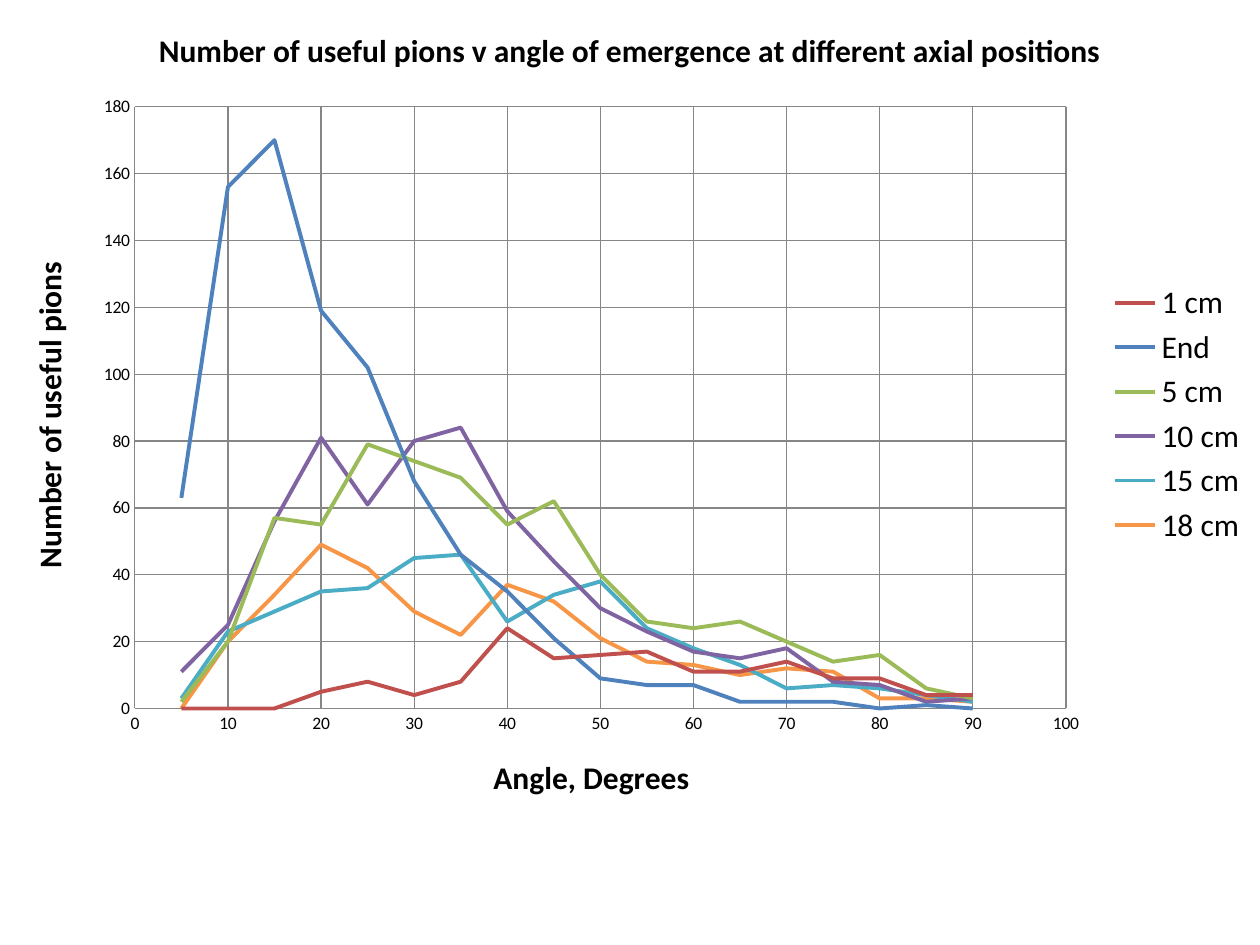
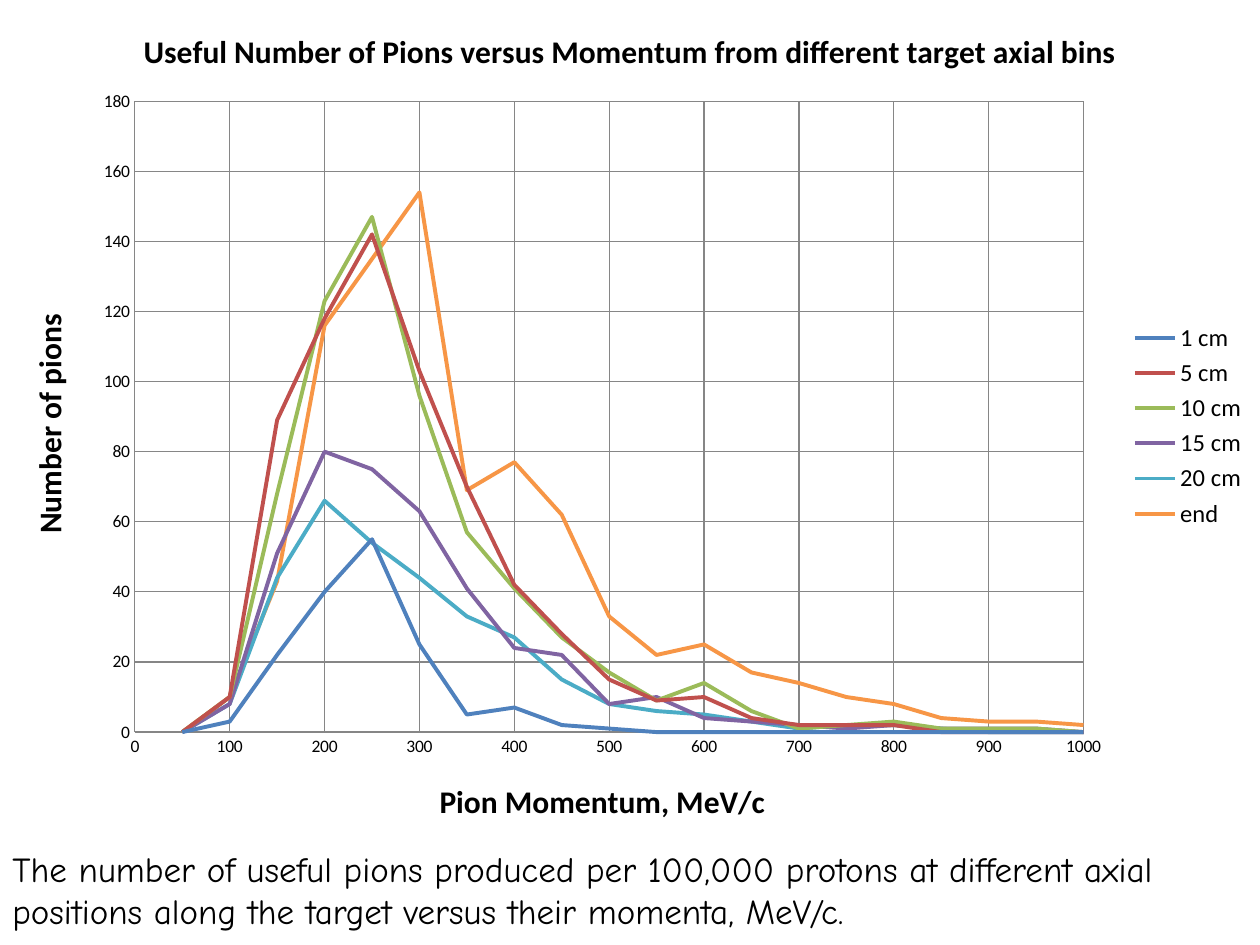
"""Two slides of smooth scatter charts on pion yield by angle and by momentum."""
from lxml.etree import SubElement
from pptx import Presentation
from pptx.chart.data import XyChartData
from pptx.dml.color import RGBColor
from pptx.enum.chart import XL_CHART_TYPE as ChartType, XL_LEGEND_POSITION as LegendPos, XL_TICK_MARK as Tick
from pptx.enum.text import MSO_AUTO_SIZE as AutoSize
from pptx.oxml.ns import qn
from pptx.util import Inches, Pt

WIDTH, HEIGHT = Inches(10), Inches(7.5)
COLORS = {"text": "000000", "grid": "868686", "blue": "4F81BD", "red": "C0504D",
          "green": "9BBB59", "purple": "8064A2", "teal": "4BACC6", "orange": "F79646"}
CHART_FONT, NOTE_FONT = "Calibri", "Comic Neue"
TITLE_SIZE, TICK_SIZE = 18, 10

ANGLES = range(5, 91, 5)
ANGLE_SERIES = [
    ("1 cm", "red", [0, 0, 0, 5, 8, 4, 8, 24, 15, 16, 17, 11, 11, 14, 9, 9, 4, 4]),
    ("End", "blue", [63, 156, 170, 119, 102, 68, 46, 35, 21, 9, 7, 7, 2, 2, 2, 0, 1, 0]),
    ("5 cm", "green", [2, 20, 57, 55, 79, 74, 69, 55, 62, 40, 26, 24, 26, 20, 14, 16, 6, 3]),
    ("10 cm", "purple", [11, 25, 56, 81, 61, 80, 84, 59, 44, 30, 23, 17, 15, 18, 8, 7, 2, 3]),
    ("15 cm", "teal", [3, 23, 29, 35, 36, 45, 46, 26, 34, 38, 24, 18, 13, 6, 7, 6, 4, 2]),
    ("18 cm", "orange", [0, 20, 34, 49, 42, 29, 22, 37, 32, 21, 14, 13, 10, 12, 11, 3, 3, 2]),
]

MOMENTA = range(50, 1001, 50)
MOMENTUM_SERIES = [
    ("1 cm", "blue", [0, 3, 22, 40, 55, 25, 5, 7, 2, 1, 0, 0, 0, 0, 0, 0, 0, 0, 0, 0]),
    ("5 cm", "red", [0, 10, 89, 118, 142, 103, 70, 42, 28, 15, 9, 10, 4, 2, 2, 2, 0, 0, 0, 0]),
    ("10 cm", "green", [0, 10, 68, 123, 147, 96, 57, 41, 27, 17, 9, 14, 6, 1, 2, 3, 1, 1, 1, 0]),
    ("15 cm", "purple", [0, 8, 51, 80, 75, 63, 41, 24, 22, 8, 10, 4, 3, 2, 1, 2, 1, 1, 1, 0]),
    ("20 cm", "teal", [0, 8, 44, 66, 54, 44, 33, 27, 15, 8, 6, 5, 3, 1, 2, 2, 1, 0, 0, 0]),
    ("end", "orange", [0, 10, 43, 116, 135, 154, 69, 77, 62, 33, 22, 25, 17, 14, 10, 8, 4, 3, 3, 2]),
]


def rgb(name):
    """Return a palette colour."""
    return RGBColor.from_string(COLORS[name])


def style_font(font, size, face=CHART_FONT, bold=False):
    """Set the face, size, weight and text colour of a font."""
    font.name, font.size, font.bold = face, Pt(size), bold
    font.color.rgb = rgb("text")


def style_line(line, color, width):
    """Set the colour and width of a line."""
    line.color.rgb, line.width = rgb(color), Pt(width)


def set_title(tf, text):
    """Write a bold chart or axis title."""
    tf.text = text
    style_font(tf.paragraphs[0].runs[0].font, TITLE_SIZE, bold=True)


def style_axis(axis, title, top, step):
    """Give an axis its title, range, grid and lines."""
    set_title(axis.axis_title.text_frame, title)
    axis.minimum_scale, axis.maximum_scale, axis.major_unit = 0, top, step
    axis.major_tick_mark = axis.minor_tick_mark = Tick.NONE
    axis.has_major_gridlines = True
    style_line(axis.major_gridlines.format.line, "grid", 0.75)
    style_line(axis.format.line, "grid", 0.75)
    style_font(axis.tick_labels.font, TICK_SIZE)


def place_plot(chart, box):
    """Fix the inner plot area as shares of the chart."""
    area = chart.element.find(".//" + qn("c:plotArea"))
    for old in area.findall(qn("c:layout")):
        area.remove(old)
    layout = SubElement(area, qn("c:layout"))
    area.insert(0, layout)
    manual = SubElement(layout, qn("c:manualLayout"))
    settings = [("layoutTarget", "inner"), ("xMode", "edge"), ("yMode", "edge")]
    for tag, val in settings + list(zip("xywh", box)):
        SubElement(manual, qn("c:" + tag)).set("val", str(val))


def add_scatter(s, height, title, x_axis, y_title, xs, series, legend_size, plot_box):
    """Add a full-width smooth scatter chart from the top of the slide."""
    data = XyChartData()
    for name, _, ys in series:
        points = data.add_series(name)
        for x, y in zip(xs, ys):
            points.add_data_point(x, y)
    chart = s.shapes.add_chart(ChartType.XY_SCATTER_SMOOTH_NO_MARKERS, 0, 0, WIDTH,
                               int(HEIGHT * height), data).chart
    style_font(chart.font, TICK_SIZE)
    set_title(chart.chart_title.text_frame, title)
    style_axis(chart.category_axis, *x_axis)
    style_axis(chart.value_axis, y_title, 180, 20)
    body = chart.value_axis.axis_title.element.find(".//" + qn("a:bodyPr"))
    body.set("rot", "-5400000")
    body.set("vert", "horz")
    chart.has_legend = True
    chart.legend.position, chart.legend.include_in_layout = LegendPos.RIGHT, False
    style_font(chart.legend.font, legend_size)
    chart.plots[0].vary_by_categories = False
    for line, (_, color, _) in zip(chart.plots[0].series, series):
        line.smooth = True
        style_line(line.format.line, color, 2.25)
    place_plot(chart, plot_box)


def add_note(s, top, height, text):
    """Add a full-width note below a chart."""
    tf = s.shapes.add_textbox(0, int(HEIGHT * top), WIDTH, int(HEIGHT * height)).text_frame
    tf.word_wrap, tf.auto_size = True, AutoSize.SHAPE_TO_FIT_TEXT
    tf.text = text
    style_font(tf.paragraphs[0].runs[0].font, 20, NOTE_FONT)


def main():
    """Build and save the slides."""
    prs = Presentation()
    prs.slide_width, prs.slide_height = WIDTH, HEIGHT
    blank = prs.slide_layouts[6]

    s = prs.slides.add_slide(blank)
    add_scatter(s, 0.876, "Number of useful pions v angle of emergence at different axial positions",
                ("Angle, Degrees", 100, 10), "Number of useful pions", ANGLES, ANGLE_SERIES,
                18, (0.107, 0.129, 0.739, 0.727))

    s = prs.slides.add_slide(blank)
    add_scatter(s, 0.901, "Useful Number of Pions versus Momentum from different target axial bins",
                ("Pion Momentum, MeV/c", 1000, 100), "Number of pions", MOMENTA, MOMENTUM_SERIES,
                14, (0.107, 0.119, 0.753, 0.741))
    add_note(s, 0.89, 0.103, "The number of useful pions produced per 100,000 protons at different "
             "axial positions along the target versus their momenta, MeV/c.")

    prs.save("out.pptx")


if __name__ == "__main__":
    main()
